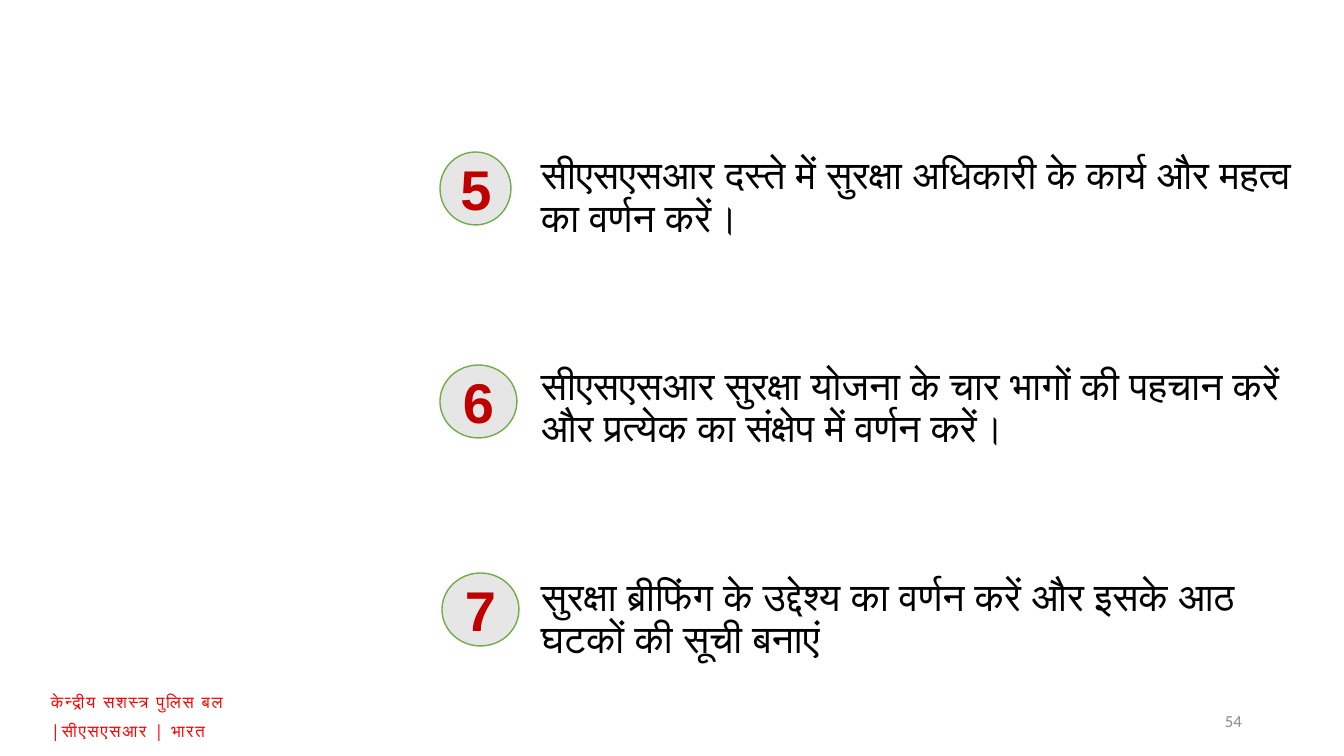
from lxml import etree
from pptx import Presentation
from pptx.dml.color import RGBColor
from pptx.enum.shapes import MSO_SHAPE
from pptx.enum.text import MSO_ANCHOR, PP_ALIGN
from pptx.oxml.ns import qn
from pptx.util import Pt

# Content: number, circle box (left, top, width, height in px), objective
OBJECTIVES = [
    ("5", (440, 152, 71, 73), "सीएसएसआर दस्ते में सुरक्षा अधिकारी के कार्य और महत्व का वर्णन करें।"),
    ("6", (440, 365, 77, 73), "सीएसएसआर सुरक्षा योजना के चार भागों की पहचान करें और प्रत्येक का संक्षेप में वर्णन करें।"),
    ("7", (442, 573, 77, 73), "सुरक्षा ब्रीफिंग के उद्देश्य का वर्णन करें और इसके आठ घटकों की सूची बनाएं"),
]
FOOTER = ["केन्द्रीय सशस्त्र पुलिस बल", "|सीएसएसआर | भारत"]
PAGE_NUMBER = "54"

# Layout in px
EMU_PER_PX = 914400 / 100.8
SLIDE_SIZE = (1344, 756)
OBJECTIVES_BOX = (531, 151, 791, 561)
FOOTER_BOX = (42, 683, 236, 67)
PAGE_NUMBER_BOX = (950, 701, 302, 40)
INSETS = (10, 5, 10, 5)
FOOTER_INSETS = (9, 9, 9, 9)

BLACK = RGBColor(0x00, 0x00, 0x00)
RED = RGBColor(0xFF, 0x00, 0x00)
DARK_RED = RGBColor(0xC0, 0x00, 0x00)
GRAY = RGBColor(0x88, 0x88, 0x88)
LIGHT_GRAY = RGBColor(0xE7, 0xE6, 0xE6)
GREEN = RGBColor(0x70, 0xAD, 0x47)

OVAL = MSO_SHAPE.OVAL
TOP, MIDDLE = MSO_ANCHOR.TOP, MSO_ANCHOR.MIDDLE
LEFT, CENTER, RIGHT = PP_ALIGN.LEFT, PP_ALIGN.CENTER, PP_ALIGN.RIGHT


def px(*lengths):
    return [round(length * EMU_PER_PX) for length in lengths]


def write(shape, lines, font_name, size, color, align=LEFT, anchor=TOP, insets=INSETS,
          gap=0, line_spacing=1.0, bold=False, tracking=0):
    frame = shape.text_frame
    frame.word_wrap = True
    frame.vertical_anchor = anchor
    (frame.margin_left, frame.margin_top,
     frame.margin_right, frame.margin_bottom) = px(*insets)
    for index, line in enumerate(lines):
        paragraph = frame.paragraphs[0] if index == 0 else frame.add_paragraph()
        paragraph.text = line
        paragraph.alignment = align
        paragraph.line_spacing = line_spacing
        paragraph.space_before = Pt(gap if index else 0)
        font = paragraph.font
        font.name, font.size, font.bold = font_name, Pt(size), bold
        font.color.rgb = color
        # Devanagari typeface and letter spacing
        properties = paragraph._p.pPr.find(qn("a:defRPr"))
        etree.SubElement(properties, qn("a:cs")).set("typeface", font_name)
        if tracking:
            properties.set("spc", str(tracking))


presentation = Presentation()
presentation.slide_width, presentation.slide_height = px(*SLIDE_SIZE)
slide = presentation.slides.add_slide(presentation.slide_layouts[6])
shapes = slide.shapes

# Footer
write(shapes.add_textbox(*px(*FOOTER_BOX)), FOOTER, "Open Sans", 12, RED,
      insets=FOOTER_INSETS, gap=6, tracking=120)

# Objectives
write(shapes.add_textbox(*px(*OBJECTIVES_BOX)), [text for _, _, text in OBJECTIVES],
      "Open Sans", 28, BLACK, gap=90, line_spacing=0.9)

# Numbered circles
for number, box, _ in OBJECTIVES:
    circle = shapes.add_shape(OVAL, *px(*box))
    circle.shadow.inherit = False
    circle.fill.solid()
    circle.fill.fore_color.rgb = LIGHT_GRAY
    circle.line.color.rgb = GREEN
    circle.line.width = Pt(1)
    write(circle, [number], "Arial", 40, DARK_RED, CENTER, MIDDLE, bold=True)

# Page number
write(shapes.add_textbox(*px(*PAGE_NUMBER_BOX)), [PAGE_NUMBER], "Calibri", 12, GRAY,
      RIGHT, MIDDLE)

presentation.save("out.pptx")
